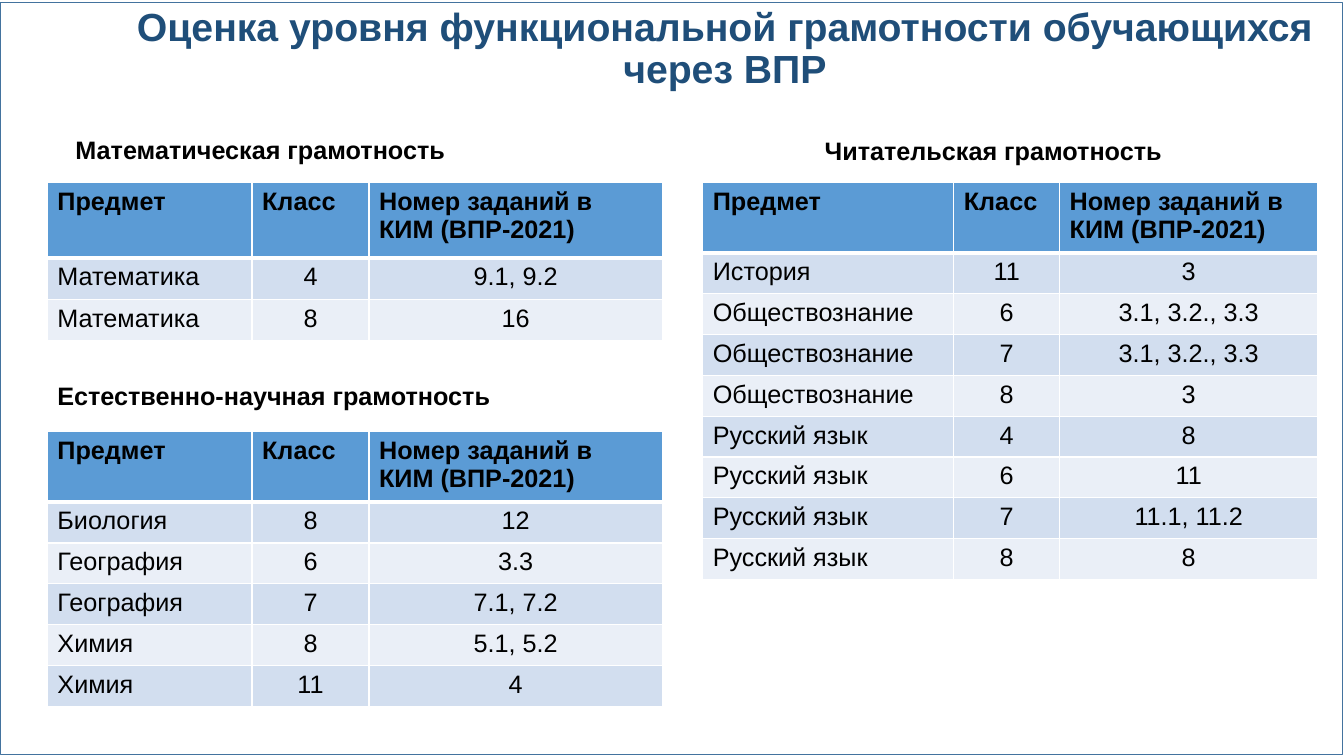
from lxml import etree
from pptx import Presentation
from pptx.dml.color import RGBColor
from pptx.enum.shapes import MSO_SHAPE
from pptx.enum.text import MSO_ANCHOR, PP_ALIGN
from pptx.oxml.ns import qn
from pptx.util import Inches, Pt


def color(hex_code):
    return RGBColor.from_string(hex_code)


def write(frame, text, size=18, bold=False, ink="000000", align=PP_ALIGN.LEFT, spacing=None):
    paragraph = frame.paragraphs[0]
    paragraph.text = text
    paragraph.alignment = align
    paragraph.line_spacing = spacing
    font = paragraph.runs[0].font
    font.name, font.size, font.bold = "Arial", Pt(size), bold
    font.color.rgb = color(ink)


presentation = Presentation()
presentation.slide_width, presentation.slide_height = Inches(13.33), Inches(7.5)
slide = presentation.slides.add_slide(presentation.slide_layouts[6])

# Slide border
border = slide.shapes.add_shape(
    MSO_SHAPE.RECTANGLE, Inches(0), Inches(0.02), Inches(13.31), Inches(7.46))
border.shadow.inherit = False
border.fill.background()
border.line.color.rgb = color("43739E")
border.line.width = Pt(0.25)

# Title
title = slide.shapes.add_textbox(Inches(1.31), Inches(0.04), Inches(11.76), Inches(0.91))
title_frame = title.text_frame
title_frame.word_wrap = True
title_frame.vertical_anchor = MSO_ANCHOR.MIDDLE
title_frame.margin_left = title_frame.margin_right = Inches(0.04)
title_frame.margin_top = title_frame.margin_bottom = Inches(0.04)
write(title_frame, "Оценка уровня функциональной грамотности обучающихся через ВПР",
      size=28, bold=True, ink="1F4E79", align=PP_ALIGN.CENTER, spacing=0.9)

# Headings and tables: heading box, table place, header height, columns, rows
header = ("Предмет", "Класс", "Номер заданий в КИМ (ВПР-2021)")
left_columns = (2.03, 1.16, 2.91)
sections = [
    ("Математическая грамотность", (0.65, 1.28, 3.98), (0.47, 1.81, 1.57), 0.75, left_columns,
     [("Математика", "4", "9.1, 9.2"),
      ("Математика", "8", "16")]),
    ("Естественно-научная грамотность", (0.47, 3.72, 4.54), (0.47, 4.28, 2.73), 0.7, left_columns,
     [("Биология", "8", "12"),
      ("География", "6", "3.3"),
      ("География", "7", "7.1, 7.2"),
      ("Химия", "8", "5.1, 5.2"),
      ("Химия", "11", "4")]),
    ("Читательская грамотность", (8.08, 1.29, 3.58), (6.97, 1.81, 3.94), 0.7, (2.49, 1.05, 2.56),
     [("История", "11", "3"),
      ("Обществознание", "6", "3.1, 3.2., 3.3"),
      ("Обществознание", "7", "3.1, 3.2., 3.3"),
      ("Обществознание", "8", "3"),
      ("Русский язык", "4", "8"),
      ("Русский язык", "6", "11"),
      ("Русский язык", "7", "11.1, 11.2"),
      ("Русский язык", "8", "8")]),
]

for heading, (x, y, width), (left, top, height), header_height, columns, records in sections:
    box = slide.shapes.add_textbox(Inches(x), Inches(y), Inches(width), Inches(0.4))
    box.text_frame.word_wrap = False
    write(box.text_frame, heading, bold=True)

    table = slide.shapes.add_table(len(records) + 1, 3, Inches(left), Inches(top),
                                   Inches(sum(columns)), Inches(height)).table
    for column, column_width in zip(table.columns, columns):
        column.width = Inches(column_width)
    row_height = (height - header_height) / len(records)

    for i, record in enumerate([header] + records):
        table.rows[i].height = Inches(row_height if i else header_height)
        for j, text in enumerate(record):
            cell = table.cell(i, j)
            centered = i > 0 and j > 0
            write(cell.text_frame, text, bold=i == 0,
                  align=PP_ALIGN.CENTER if centered else PP_ALIGN.LEFT)

            # White cell borders, thick under the header
            properties = cell._tc.get_or_add_tcPr()
            for side in ("L", "R", "T", "B"):
                thick = (i, side) in ((0, "B"), (1, "T"))
                line = etree.SubElement(properties, qn(f"a:ln{side}"), w=str(Pt(3 if thick else 1)))
                fill = etree.SubElement(line, qn("a:solidFill"))
                etree.SubElement(fill, qn("a:srgbClr"), val="FFFFFF")
            cell.fill.solid()
            band = "D2DEEF" if i % 2 else "EAEFF7"
            cell.fill.fore_color.rgb = color(band if i else "5B9BD5")

presentation.save("out.pptx")
